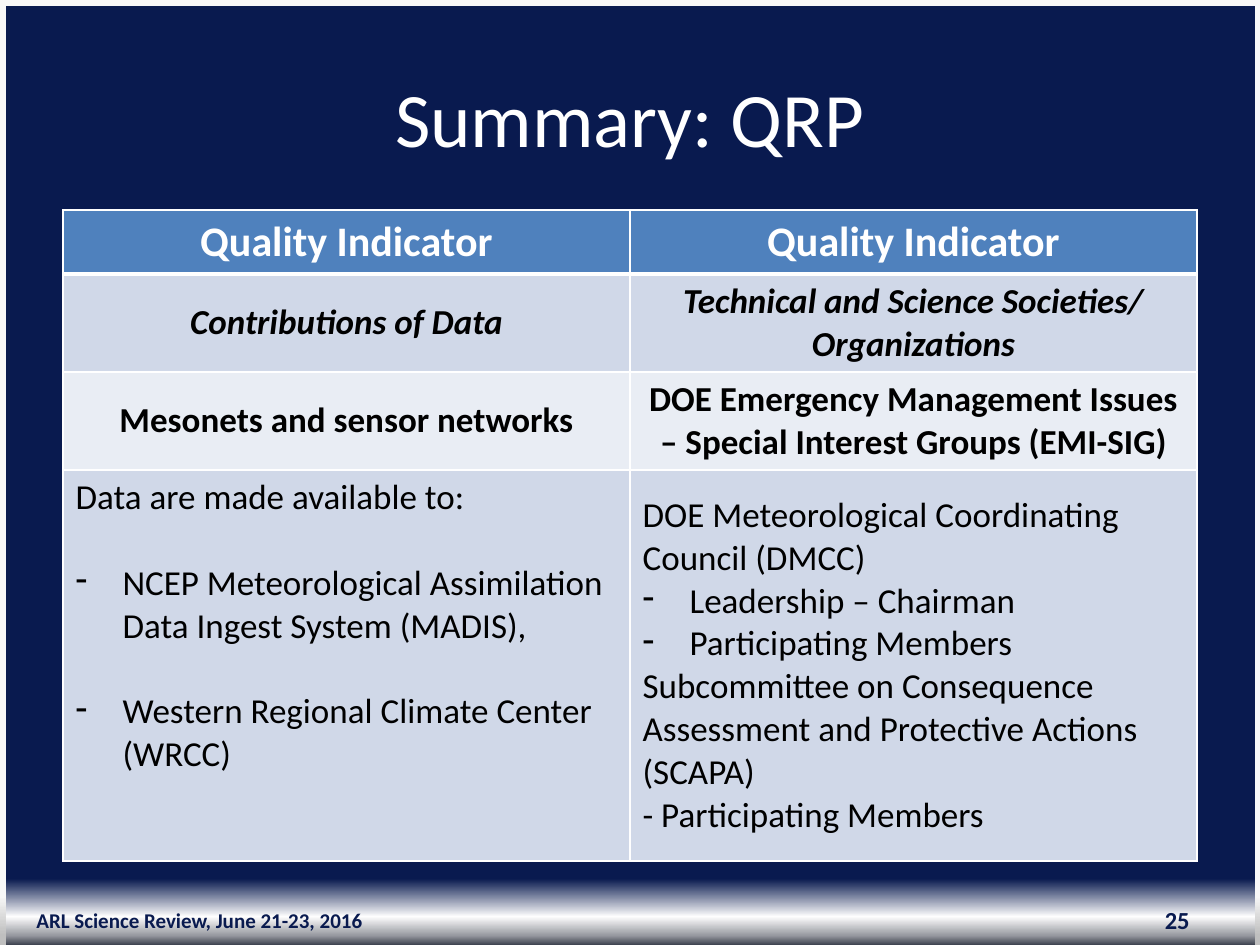
from lxml.etree import SubElement
from pptx import Presentation
from pptx.dml.color import RGBColor
from pptx.enum.shapes import MSO_SHAPE as SHAPE
from pptx.enum.text import MSO_ANCHOR as ANCHOR, PP_ALIGN as ALIGN
from pptx.oxml.ns import qn
from pptx.util import Emu, Pt

WIDTH, HEIGHT = 1260, 945
NAVY, WHITE, BLACK, EDGE = "091A4F", "FFFFFF", "000000", "F8F8F8"
BLUE, BAND, PALE = "4F81BD", "D0D8E8", "E9EDF4"
BACKDROP = [(93, NAVY), (97, "FEFEFE"), (99, "9799A0"), (100, "3C414E")]
SIDE = [(0, EDGE), (95, "F5F5F5"), (99, "BFBFBF")]
BODY = {"size": 20, "color": BLACK}
STRONG = {**BODY, "bold": True}
ROWS = [
    (64, BLUE, {"size": 24, "color": WHITE, "bold": True},
     ["Quality Indicator", "Quality Indicator"]),
    (98, BAND, {**STRONG, "italic": True},
     ["Contributions of Data", "Technical and Science Societies/ Organizations"]),
    (98, PALE, STRONG,
     ["Mesonets and sensor networks",
      "DOE Emergency Management Issues – Special Interest Groups (EMI-SIG)"]),
]
DETAIL_HEIGHT = 391
DATA_USERS = [
    ("Data are made available to:", False),
    ("NCEP Meteorological Assimilation Data Ingest System (MADIS),", True),
    ("Western Regional Climate Center (WRCC)", True),
]
COUNCILS = [
    ("DOE Meteorological Coordinating Council (DMCC)", False),
    ("Leadership – Chairman", True),
    ("Participating Members", True),
    ("Subcommittee on Consequence Assessment and Protective Actions (SCAPA)", False),
    ("- Participating Members", False),
]


def px(n):
    """Turn pixels into EMU."""
    return Emu(round(n * 914400 / 126))


def rgb(value):
    """Turn a hex string into a colour."""
    return RGBColor.from_string(value)


def gradient(fill, element, stops):
    """Fill from top to bottom with (percent, colour) stops."""
    fill.gradient()
    fill.gradient_angle = 270
    gs_list = element.find(".//" + qn("a:gsLst"))
    for gs in list(gs_list):
        gs_list.remove(gs)
    for pos, color in stops:
        gs = SubElement(gs_list, qn("a:gs"), pos=str(pos * 1000))
        SubElement(gs, qn("a:srgbClr"), val=color)


def write(p, text, fmt, align=ALIGN.LEFT):
    """Write one formatted run into a paragraph."""
    p.alignment = align
    r = p.add_run()
    r.text = text
    values = {"name": "Calibri", "bold": False, "italic": False, **fmt}
    r.font.color.rgb = rgb(values.pop("color"))
    values["size"] = Pt(values["size"])
    for name, value in values.items():
        setattr(r.font, name, value)


def dash(p):
    """Give a paragraph a hanging dash bullet."""
    pPr = p._p.get_or_add_pPr()
    pPr.set("marL", str(px(47)))
    pPr.set("indent", str(-px(47)))
    SubElement(pPr, qn("a:buChar"), char="-")


def label(s, box, text, fmt, align):
    """Place a line of text, centred vertically in its box."""
    tf = s.shapes.add_textbox(*map(px, box)).text_frame
    tf.word_wrap = True
    tf.vertical_anchor = ANCHOR.MIDDLE
    write(tf.paragraphs[0], text, fmt, align)


def frame(s, x, y, w, h):
    """Draw the pale strips on the left, top and right edges."""
    strips = [
        ((x, y, 6, h), SIDE),
        ((x, y, w, 6), None),
        ((x + w - 5, y, 5, h), SIDE),
    ]
    for box, stops in strips:
        sp = s.shapes.add_shape(SHAPE.RECTANGLE, *map(px, box))
        sp.shadow.inherit = False
        sp.line.fill.background()
        if stops:
            gradient(sp.fill, sp._element, stops)
        else:
            sp.fill.solid()
            sp.fill.fore_color.rgb = rgb(EDGE)


def style_cell(cell, color, top, bottom):
    """Set the anchor, white borders and fill of a cell."""
    cell.vertical_anchor = ANCHOR.MIDDLE
    tcPr = cell._tc.get_or_add_tcPr()
    for side, width in zip("LRTB", (1, 1, top, bottom)):
        ln = SubElement(tcPr, qn("a:ln" + side), w=str(Pt(width)))
        solid = SubElement(ln, qn("a:solidFill"))
        SubElement(solid, qn("a:srgbClr"), val=WHITE)
    cell.fill.solid()
    cell.fill.fore_color.rgb = rgb(color)


def details(cell, items, gap):
    """Write plain and dashed paragraphs, with a gap before each dash."""
    tf = cell.text_frame
    for i, (text, dashed) in enumerate(items):
        p = tf.add_paragraph() if i else tf.paragraphs[0]
        write(p, text, BODY)
        if dashed:
            p.space_before = Pt(gap)
            dash(p)


def indicators(s, x, y, w):
    """Build the two-column table of quality indicators."""
    heights = [row[0] for row in ROWS] + [DETAIL_HEIGHT]
    table = s.shapes.add_table(
        len(heights), 2, *map(px, (x, y, w, sum(heights)))).table
    for col in table.columns:
        col.width = px(w / 2)
    for row, height in zip(table.rows, heights):
        row.height = px(height)
    for i, (_, color, fmt, texts) in enumerate(ROWS):
        for cell, text in zip(table.rows[i].cells, texts):
            style_cell(cell, color, 3 if i == 1 else 1, 1 if i else 3)
            write(cell.text_frame.paragraphs[0], text, fmt, ALIGN.CENTER)
    left, right = table.rows[len(ROWS)].cells
    for cell, items, gap in ((left, DATA_USERS, 24.4), (right, COUNCILS, 0)):
        style_cell(cell, BAND, 1, 1)
        details(cell, items, gap)
    left.vertical_anchor = ANCHOR.TOP


def footer(s, x, y, w, h):
    """Place the event name and the page number."""
    fmt = {"color": NAVY, "bold": True}
    label(s, (x, y, 399, h), "ARL Science Review, June 21-23, 2016",
          {**fmt, "size": 12}, ALIGN.CENTER)
    label(s, (x + w - 294, y, 294, h), "25", {**fmt, "size": 14}, ALIGN.RIGHT)


def main():
    """Build the slide and save it."""
    prs = Presentation()
    prs.slide_width, prs.slide_height = px(WIDTH), px(HEIGHT)
    s = prs.slides.add_slide(prs.slide_layouts[6])
    gradient(s.background.fill, s._element, BACKDROP)
    frame(s, 0, 0, WIDTH, HEIGHT)
    label(s, (63, 38, 1134, 157), "Summary: QRP",
          {"size": 44, "color": WHITE}, ALIGN.CENTER)
    footer(s, 0, 895, 1202, 50)
    indicators(s, 63, 210, 1134)
    prs.save("out.pptx")


if __name__ == "__main__":
    main()
